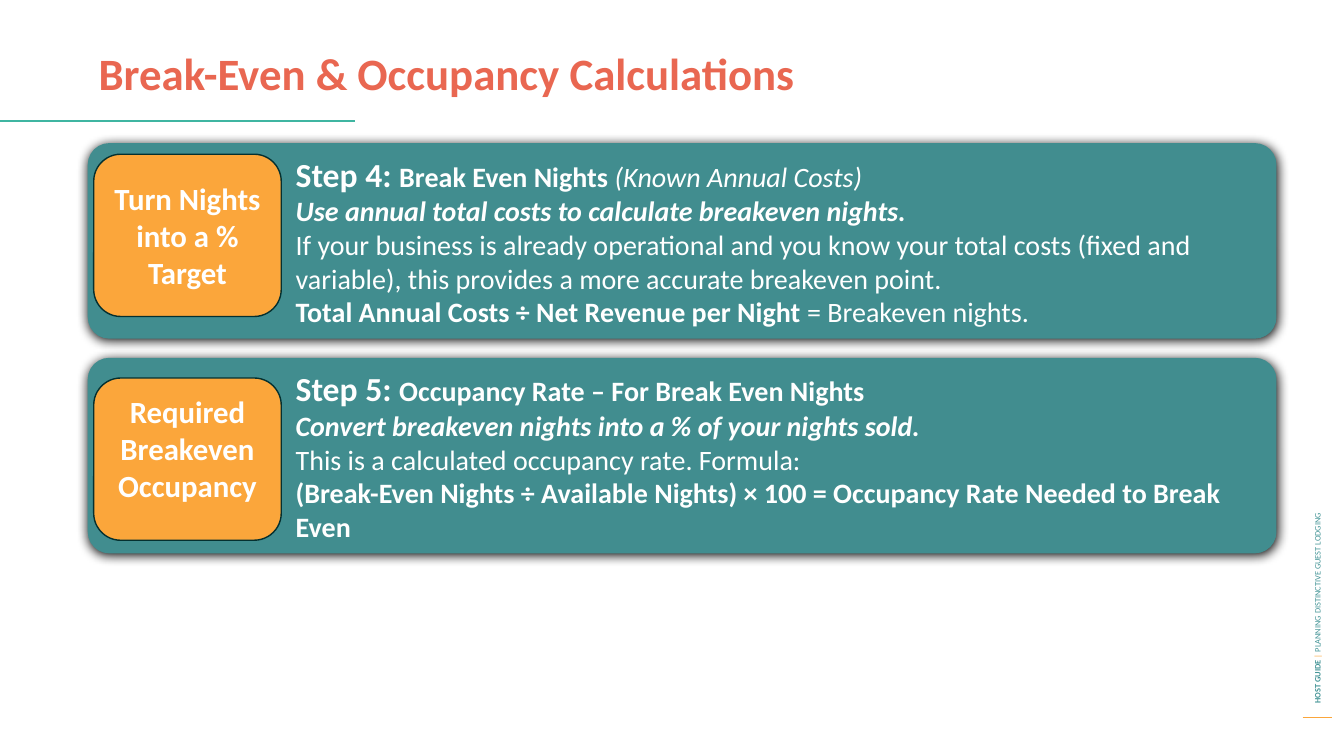
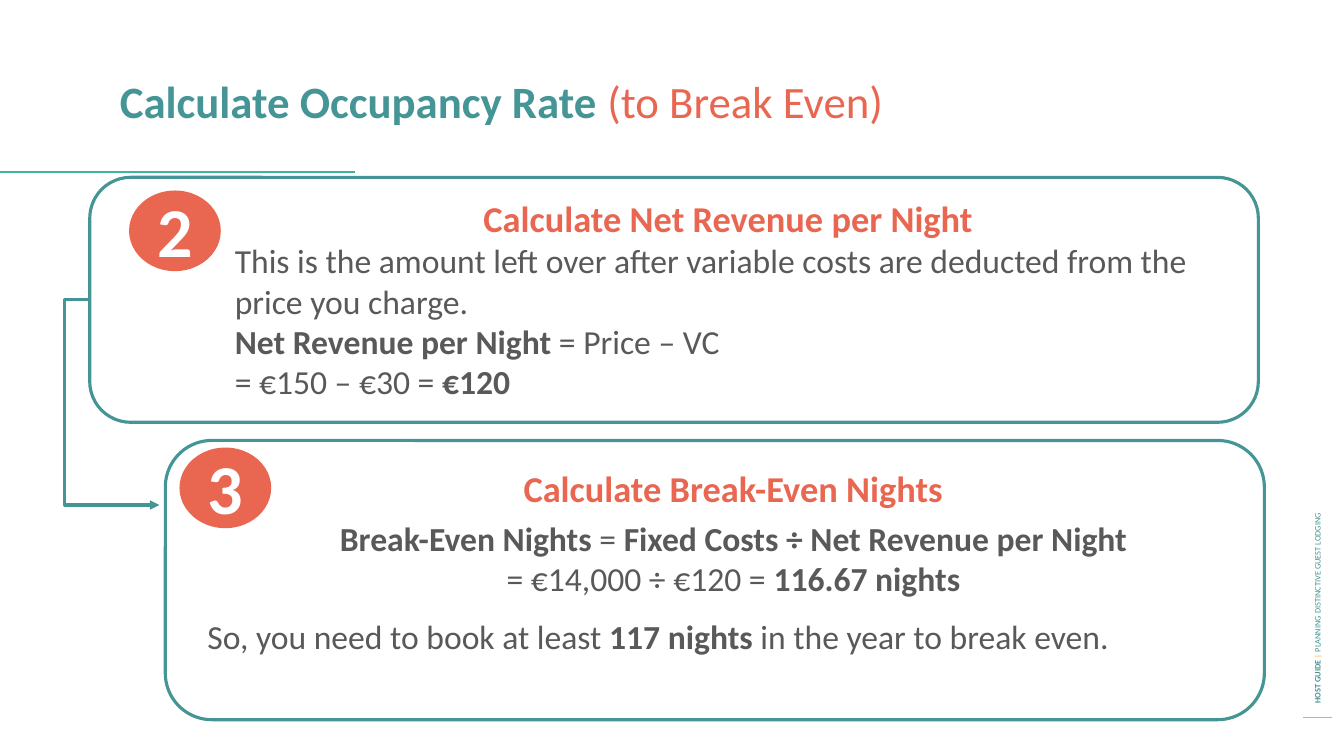
"""Two slides on break-even nights and occupancy rate."""
from lxml import etree
from pptx import Presentation
from pptx.dml.color import RGBColor
from pptx.enum.shapes import MSO_CONNECTOR as LINK, MSO_SHAPE as SHAPE
from pptx.enum.text import MSO_ANCHOR as ANCHOR, PP_ALIGN as ALIGN
from pptx.oxml.ns import qn
from pptx.util import Inches, Pt

HUES = {"teal": "459597", "deep": "418D8F", "mint": "3FB5A1", "coral": "E96751",
        "amber": "FBA63B", "ink": "043030", "grey": "595959", "white": "FFFFFF"}
FONT = "Calibri"

FOOT = [("HOST GUIDE ", "b"), ("| ", "", {"hue": "amber"}),
        ("PLANNING DISTINCTIVE GUEST LODGING", "")]

STEPS = [
    {"tag": "Turn Nights into a % Target", "drop": 0.11, "lift": 0.05, "paras": [
        [("Step 4: ", "b", {"size": 24}), ("Break Even Nights ", "b"),
         ("(Known Annual Costs)", "i")],
        [("Use annual total costs to calculate breakeven nights.\n", "bi"),
         ("If your business is already operational and you know your total costs "
          "(fixed and variable), this provides a more accurate breakeven point.\n", ""),
         ("Total Annual Costs ÷ Net Revenue per Night", "b"),
         (" = Breakeven nights.", "")]]},
    {"tag": "Required Breakeven Occupancy", "drop": 0.2, "lift": 0.26, "paras": [
        [("Step 5: ", "b", {"size": 24}), ("Occupancy Rate – For Break Even Nights", "b")],
        [("Convert breakeven nights into a % of your nights sold.\n", "bi"),
         ("This is a calculated occupancy rate. Formula:\n", ""),
         ("(Break-Even Nights ÷ Available Nights) × 100 = "
          "Occupancy Rate Needed to Break Even", "b")]]},
]

HEAD = {"size": 26, "hue": "coral", "align": ALIGN.CENTER}
BODY = {"size": 24, "hue": "grey"}
CARDS = [
    {"box": (0.89, 1.76, 11.59, 2.43), "text": (2.23, 1.9, 9.99, 0.88),
     "num": "2", "dot": (1.28, 1.89), "paras": [
        ([("Calculate Net Revenue per Night", "b")], HEAD),
        ([("This is the amount left over after variable costs are deducted "
           "from the price you charge.", "")], BODY),
        ([("Net Revenue per Night", "b"), (" = Price – VC\n= €150 – €30 = ", ""),
          ("€120", "b")], BODY)]},
    {"box": (1.64, 4.37, 10.9, 2.77), "text": (1.96, 4.57, 10.63, 0.88),
     "num": "3", "dot": (1.78, 4.44), "paras": [
        ([("Calculate Break-Even Nights", "b")], {**HEAD, "after": 6}),
        ([("Break-Even Nights", "b"), (" = ", ""),
          ("Fixed Costs ÷ Net Revenue per Night\n", "b"),
          ("= €14,000 ÷ €120 = ", ""), ("116.67 nights", "b")],
         {**BODY, "align": ALIGN.CENTER, "after": 6}),
        ([("So, you need to book at least ", ""), ("117 nights", "b"),
          (" in the year to break even.", "")],
         {**BODY, "before": 10, "pitch": 0.9})]},
]


def rgb(hue):
    return RGBColor.from_string(HUES[hue])


def place(*nums):
    return [Inches(n) for n in nums]


def style(font, size=None, hue=None):
    if size:
        font.size = Pt(size)
    if hue:
        font.color.rgb = rgb(hue)


def write(frame, paras, anchor=ANCHOR.TOP, pads=(0.1, 0.05, 0.1, 0.05)):
    """Fill a frame with (runs, look) paragraphs."""
    frame.word_wrap = True
    frame.vertical_anchor = anchor
    (frame.margin_left, frame.margin_top,
     frame.margin_right, frame.margin_bottom) = place(*pads)
    for i, (runs, look) in enumerate(paras):
        para = frame.add_paragraph() if i else frame.paragraphs[0]
        para.alignment = look.get("align", ALIGN.LEFT)
        para.line_spacing = look.get("pitch", 1.0)
        para.space_before = Pt(look.get("before", 0))
        para.space_after = Pt(look.get("after", 0))
        para.font.name = FONT
        style(para.font, look["size"], look["hue"])
        for words, marks, *extra in runs:
            for j, part in enumerate(words.split("\n")):
                if j:
                    para.add_line_break()
                if part:
                    run = para.add_run()
                    run.text = part
                    run.font.bold = "b" in marks
                    run.font.italic = "i" in marks
                    style(run.font, **(extra[0] if extra else {}))


def label(slide, box, paras, **opts):
    area = slide.shapes.add_textbox(*place(*box))
    write(area.text_frame, paras, **opts)
    return area


def block(slide, kind, box, fill=None, line=None, width=1):
    shape = slide.shapes.add_shape(kind, *place(*box))
    shape.shadow.inherit = False
    if fill:
        shape.fill.solid()
        shape.fill.fore_color.rgb = rgb(fill)
    else:
        shape.fill.background()
    if line:
        shape.line.color.rgb = rgb(line)
        shape.line.width = Pt(width)
    else:
        shape.line.fill.background()
    return shape


def link(slide, ends, hue, width, kind=LINK.STRAIGHT):
    line = slide.shapes.add_connector(kind, *place(*ends))
    line.line.color.rgb = rgb(hue)
    line.line.width = Pt(width)
    etree.SubElement(line._element.spPr, qn("a:effectLst"))
    return line


def glow(shape):
    """Add a soft dark shadow around a shape."""
    effects = shape._element.spPr.find(qn("a:effectLst"))
    cast = etree.SubElement(effects, qn("a:outerShdw"), blurRad=str(Pt(8.5)),
                            dist=str(Pt(1)), dir="5400000", algn="ctr", rotWithShape="0")
    etree.SubElement(cast, qn("a:srgbClr"), val="000000")


def elbow(slide, ends, bend):
    """Draw a bent arrow whose middle leg stands at the given share of its width."""
    line = link(slide, ends, "teal", 2.25, LINK.ELBOW)
    geom = line._element.spPr.find(qn("a:prstGeom"))
    guides = geom.find(qn("a:avLst"))
    if guides is None:
        guides = etree.SubElement(geom, qn("a:avLst"))
    etree.SubElement(guides, qn("a:gd"), name="adj1", fmla=f"val {round(bend * 100000)}")
    etree.SubElement(line.line._get_or_add_ln(), qn("a:tailEnd"), type="triangle")


def start(deck):
    """Add a blank slide with the side footer."""
    slide = deck.slides.add_slide(deck.slide_layouts[6])
    link(slide, (12.92, 7.12, 13.21, 7.12), "amber", 0.75)
    side = label(slide, (10.18, 4.09, 5.77, 0.2),
                 [(FOOT, {"size": 6, "hue": "teal"})], anchor=ANCHOR.MIDDLE)
    side.rotation = 270
    return slide


def title(slide, left, top, rule, runs):
    label(slide, (left, top, 11.61, 0.88),
          [(runs, {"size": 32, "hue": "coral", "pitch": 0.9})])
    link(slide, (0, rule, 3.52, rule), "mint", 1.5)


def steps(deck):
    slide = start(deck)
    title(slide, 0.88, 0.46, 1.2, [("Break-Even & Occupancy Calculations", "b")])
    for i, step in enumerate(STEPS):
        top = 1.42 + i * 2.13
        panel = block(slide, SHAPE.ROUNDED_RECTANGLE, (0.87, top, 11.79, 1.94), "deep")
        panel.adjustments[0] = 0.11
        glow(panel)
        look = {"size": 20, "hue": "white"}
        write(panel.text_frame, [(runs, look) for runs in step["paras"]],
              ANCHOR.MIDDLE, (2, 0.04, 0.04, 0.04))
        tag = block(slide, SHAPE.FLOWCHART_ALTERNATE_PROCESS,
                    (0.93, top + step["drop"], 1.86, 1.61), "amber", "ink")
        look = {"size": 22, "hue": "white", "align": ALIGN.CENTER}
        write(tag.text_frame, [([(step["tag"], "b")], look)],
              ANCHOR.MIDDLE, (0.05, 0.05, 0.05, step["lift"]))


def cards(deck):
    slide = start(deck)
    title(slide, 1.09, 0.74, 1.71, [("Calculate Occupancy Rate ", "b", {"hue": "teal"}),
                                    ("(to Break Even)", "")])
    for card in CARDS:
        block(slide, SHAPE.FLOWCHART_ALTERNATE_PROCESS, card["box"], line="teal", width=2.25)
        label(slide, card["text"], card["paras"])
        left, top = card["dot"]
        block(slide, SHAPE.OVAL, (left, top, 0.91, 0.8), "coral")
        look = {"size": 50, "hue": "white", "align": ALIGN.CENTER}
        label(slide, (left, top - 0.08, 0.91, 0.94), [([(card["num"], "b")], look)])
    elbow(slide, (0.89, 2.97, 1.58, 5.01), -0.36)


def main():
    deck = Presentation()
    deck.slide_width, deck.slide_height = place(13.33, 7.5)
    steps(deck)
    cards(deck)
    deck.save("out.pptx")


if __name__ == "__main__":
    main()
